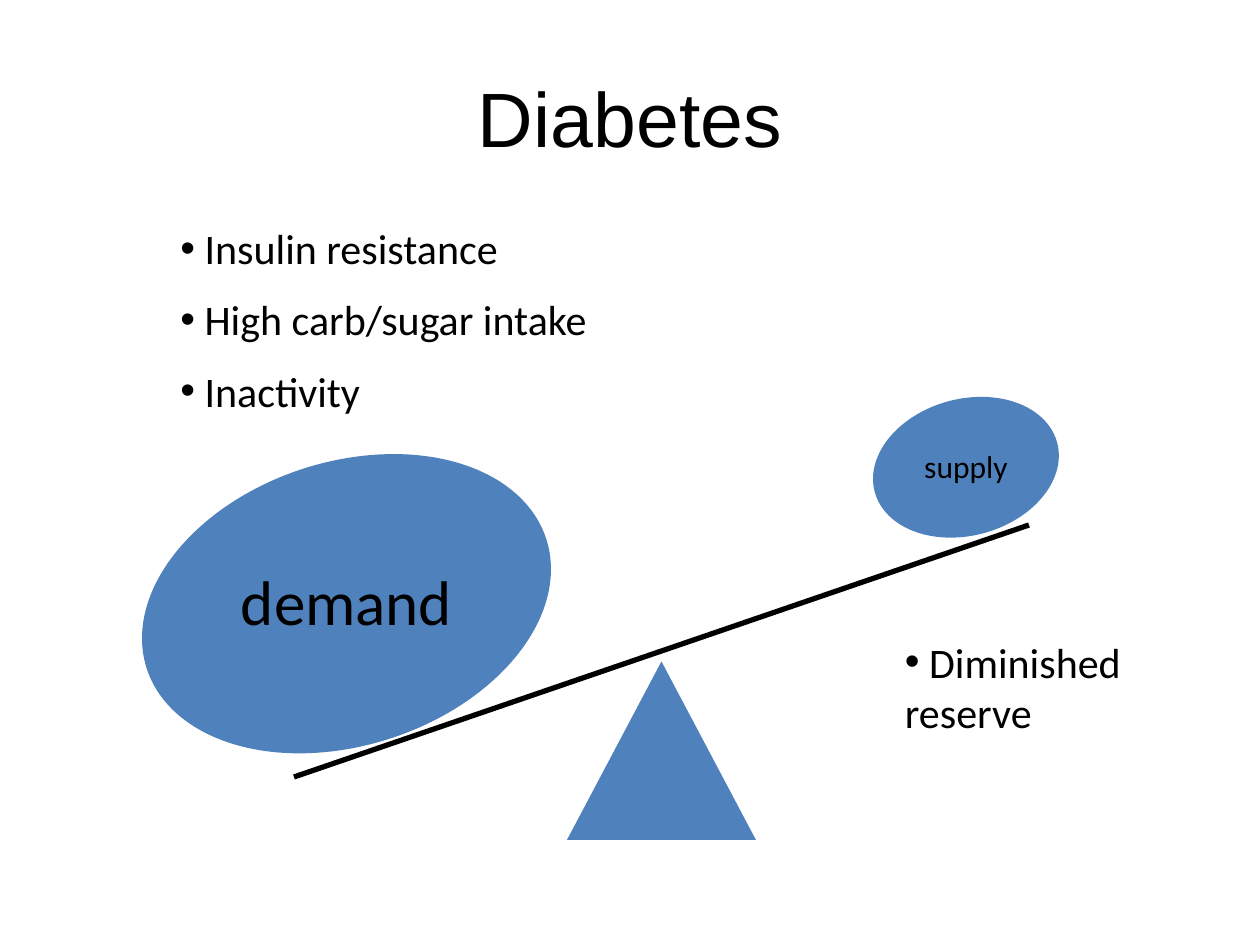
import pptx
import pptx.dml.color
import pptx.enum.shapes
import pptx.enum.text
import pptx.oxml.ns
import pptx.util
from lxml import etree

COLOURS = {"balance": "4F81BD", "ink": "000000"}
CELL = pptx.util.Inches(1) / 12
ALIGN = pptx.enum.text.PP_ALIGN
SHAPE = pptx.enum.shapes.MSO_SHAPE


def cells(*values):
    """Turn grid cells, twelve to the inch, into lengths."""
    return [round(value * CELL) for value in values]


def within(box, left, top, width, height):
    """Place a part, measured in cells, relative to a region's box."""
    return cells(box[0] + left, box[1] + top, width, height)


def colour(name):
    """Look up a named colour."""
    return pptx.dml.color.RGBColor.from_string(COLOURS[name])


def add_child(parent, tag, **attributes):
    """Append a DrawingML element with its attributes."""
    return etree.SubElement(parent, pptx.oxml.ns.qn(tag), attributes)


def apply_format(target, formats):
    """Set each attribute named in a dict."""
    for name, value in formats.items():
        setattr(target, name, value)


def format_font(font, size, name="Calibri"):
    """Give a font its face, size and colour."""
    apply_format(font, {"name": name, "size": pptx.util.Pt(size)})
    font.color.rgb = colour("ink")


def add_text(shapes, place, lines, size, align=ALIGN.LEFT, bullet=False):
    """Write lines in a wrapping text box, with optional bullets."""
    frame = shapes.add_textbox(*place).text_frame
    frame.word_wrap = True
    frame.text = "\n".join(lines)
    for index, paragraph in enumerate(frame.paragraphs):
        paragraph.alignment = align
        format_font(paragraph.runs[0].font, size)
        if index:
            paragraph.space_before = pptx.util.Pt(size / 2)
        if bullet:
            properties = paragraph._p.get_or_add_pPr()
            add_child(properties, "a:buFont", typeface="Arial")
            add_child(properties, "a:buChar", char="•")


def add_solid(shapes, kind, place, rotation=0):
    """Draw a plain filled shape."""
    shape = shapes.add_shape(kind, *place)
    shape.rotation = rotation
    shape.shadow.inherit = False
    shape.fill.solid()
    shape.fill.fore_color.rgb = colour("balance")
    shape.line.fill.background()


def add_beam(shapes, box, start, end):
    """Draw the tilted beam between two points of the box."""
    points = [box[0] + start[0], box[1] + start[1], box[0] + end[0], box[1] + end[1]]
    beam = shapes.add_connector(pptx.enum.shapes.MSO_CONNECTOR.STRAIGHT, *cells(*points))
    beam.line.color.rgb = colour("ink")
    beam.line.width = pptx.util.Pt(3)
    add_child(beam._element.spPr, "a:effectLst")


def add_seesaw(slide, box):
    """Draw the balance with demand outweighing supply."""
    shapes = slide.shapes.add_group_shape().shapes
    add_solid(shapes, SHAPE.ISOSCELES_TRIANGLE, within(box, 41, 25, 18, 17))
    add_beam(shapes, box, (15, 36), (85, 12))
    add_solid(shapes, SHAPE.OVAL, within(box, 0, 6, 40, 27), 342)
    add_solid(shapes, SHAPE.OVAL, within(box, 70, 0, 18, 13), 344.8)
    add_text(shapes, within(box, 7, 15, 26, 8.5), ["demand"], 36, ALIGN.CENTER)
    add_text(shapes, within(box, 70, 4, 18, 5.1), ["supply"], 18, ALIGN.CENTER)


def add_title(slide, box, text):
    """Place and format the title placeholder."""
    title = slide.shapes.title
    apply_format(title, dict(zip(("left", "top", "width", "height"), cells(*box))))
    title.text_frame.text = text
    title.text_frame.vertical_anchor = pptx.enum.text.MSO_ANCHOR.MIDDLE
    paragraph = title.text_frame.paragraphs[0]
    paragraph.alignment = ALIGN.CENTER
    format_font(paragraph.runs[0].font, 44, "Arial")


def main():
    """Build and save the slide."""
    presentation = pptx.Presentation()
    size = cells(120, 90)
    apply_format(presentation, {"slide_width": size[0], "slide_height": size[1]})
    slide = presentation.slides.add_slide(presentation.slide_layouts[5])
    add_title(slide, (6, 3.6, 108, 15), "Diabetes")
    add_seesaw(slide, (13, 38, 88, 42))
    add_text(slide.shapes, cells(85, 60, 26, 10.8), [" Diminished reserve"], 24, bullet=True)
    causes = [" Insulin resistance", " High carb/sugar intake", " Inactivity"]
    add_text(slide.shapes, cells(16, 20.6, 45, 20.4), causes, 24, bullet=True)
    presentation.save("out.pptx")


if __name__ == "__main__":
    main()
